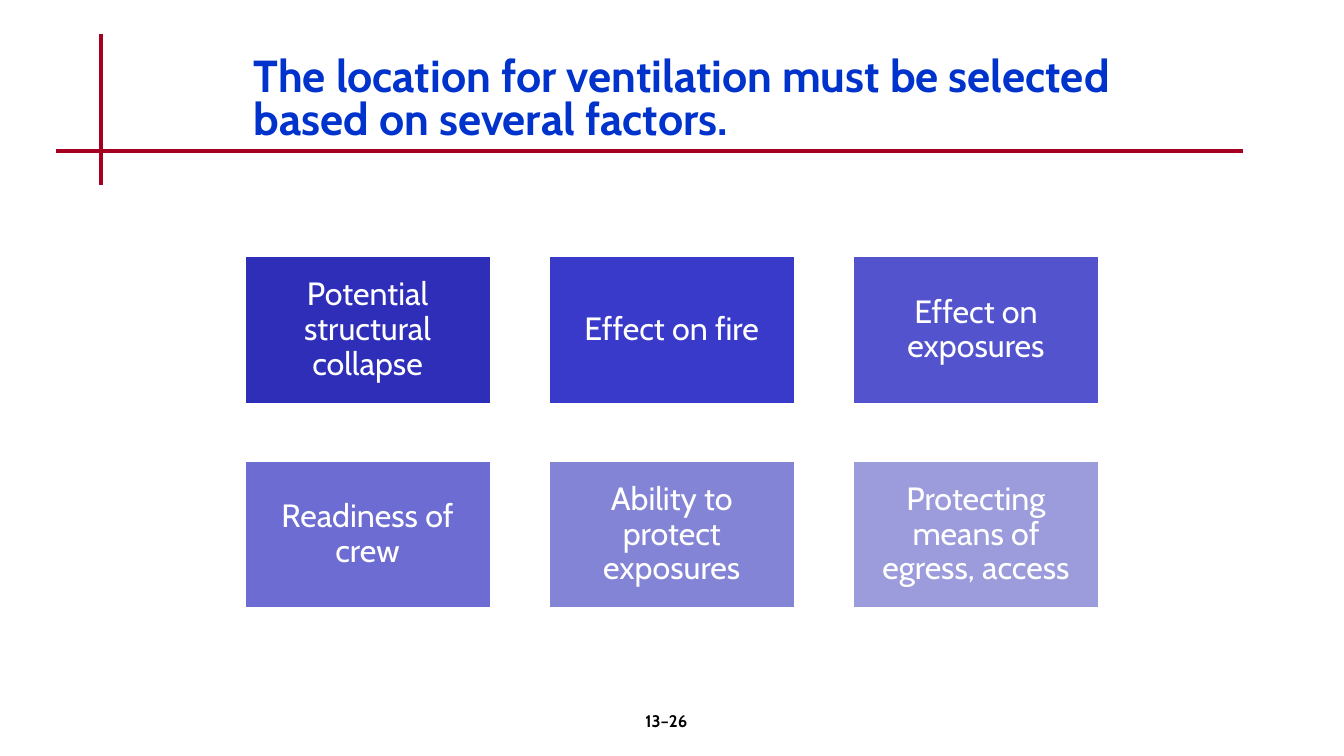
from lxml import etree
from pptx import Presentation
from pptx.dml.color import RGBColor
from pptx.enum.shapes import MSO_CONNECTOR, MSO_SHAPE
from pptx.enum.text import MSO_ANCHOR, PP_ALIGN
from pptx.oxml.ns import qn
from pptx.util import Pt

FONT = "Cabin"
COLORS = {
    "title": "0033CC",
    "rule": "A50021",
    "number": "000000",
    "white": "FFFFFF",
}
FACTORS = [
    ("Potential structural collapse", "2E2EB9"),
    ("Effect on fire", "3A3ACA"),
    ("Effect on exposures", "5353CE"),
    ("Readiness of crew", "6C6CD2"),
    ("Ability to protect exposures", "8484D7"),
    ("Protecting means of egress, access", "9C9CDD"),
]
COLUMNS, ROWS = 3, 2


def rgb(name):
    return RGBColor.from_string(COLORS[name])


def write(shape, text, size, color, align, anchor, bold=False, spacing=1.0):
    frame = shape.text_frame
    frame.word_wrap = True
    frame.vertical_anchor = anchor
    frame.text = text
    paragraph = frame.paragraphs[0]
    paragraph.alignment = align
    paragraph.line_spacing = spacing
    font = paragraph.runs[0].font
    font.name, font.size, font.bold = FONT, Pt(size), bold
    font.color.rgb = rgb(color)


def add_rule(slide, start, end):
    points = [Pt(value) for value in (*start, *end)]
    rule = slide.shapes.add_connector(MSO_CONNECTOR.STRAIGHT, *points)
    rule.line.color.rgb = rgb("rule")
    rule.line.width = Pt(3)
    etree.SubElement(rule._element.spPr, qn("a:effectLst"))


def add_crossed_rules(slide, left, top, width, height):
    cross_x, cross_y = left + 32, top + 84
    add_rule(slide, (cross_x, top), (cross_x, top + height))
    add_rule(slide, (left, cross_y), (left + width, cross_y))


def add_title(slide, left, top, width, height):
    title = slide.shapes.title
    title.left, title.top = Pt(left), Pt(top)
    title.width, title.height = Pt(width), Pt(height)
    write(title, "The location for ventilation must be selected based on several factors.",
          32, "title", PP_ALIGN.LEFT, MSO_ANCHOR.MIDDLE, bold=True, spacing=0.8)


def add_factor_grid(slide, left, top, width, height):
    box_width, box_height = 176.4, 105.84
    step_x = (width - box_width) / (COLUMNS - 1)
    step_y = (height - box_height) / (ROWS - 1)
    for index, (text, fill) in enumerate(FACTORS):
        row, column = divmod(index, COLUMNS)
        box = slide.shapes.add_shape(
            MSO_SHAPE.RECTANGLE,
            Pt(left + column * step_x), Pt(top + row * step_y),
            Pt(box_width), Pt(box_height))
        box.shadow.inherit = False
        box.fill.solid()
        box.fill.fore_color.rgb = RGBColor.from_string(fill)
        box.line.color.rgb = rgb("white")
        box.line.width = Pt(2)
        frame = box.text_frame
        frame.margin_left = frame.margin_right = Pt(13)
        frame.margin_top = frame.margin_bottom = Pt(13)
        write(box, text, 23, "white", PP_ALIGN.CENTER, MSO_ANCHOR.MIDDLE, spacing=0.9)


def add_page_number(slide, left, top, width, height):
    box = slide.shapes.add_textbox(Pt(left), Pt(top), Pt(width), Pt(height))
    write(box, "13–26", 12, "number", PP_ALIGN.CENTER, MSO_ANCHOR.TOP, bold=True)


def main():
    presentation = Presentation()
    presentation.slide_width, presentation.slide_height = Pt(960), Pt(540)
    title_only = presentation.slide_layouts[5]
    slide = presentation.slides.add_slide(title_only)
    add_crossed_rules(slide, 40, 24, 848, 108)
    add_title(slide, 174, 36, 646, 72)
    add_factor_grid(slide, 174.4, 182.8, 611, 252)
    add_page_number(slide, 376, 504, 200, 36)
    presentation.save("out.pptx")


if __name__ == "__main__":
    main()
